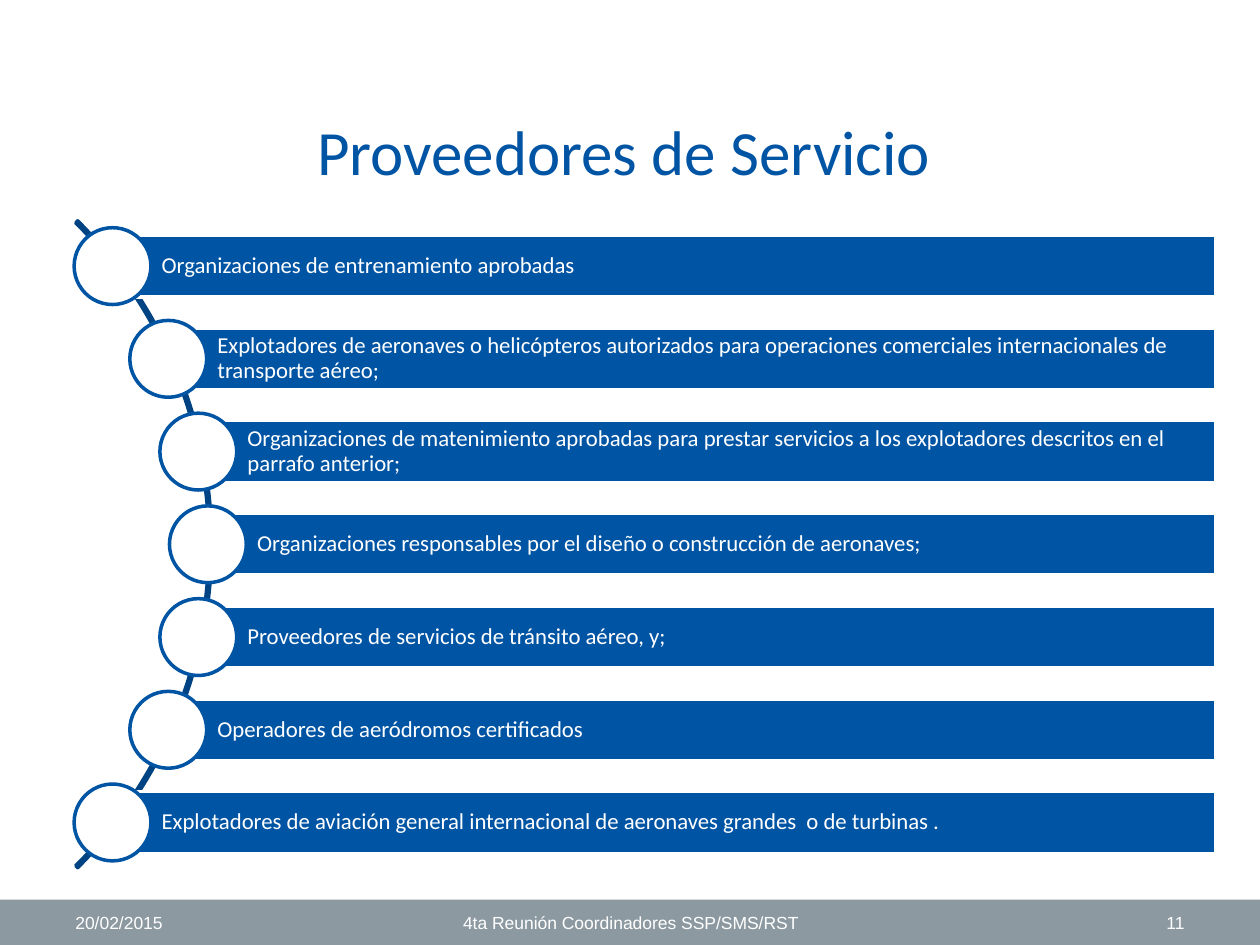
from math import sqrt

from pptx import Presentation
from pptx.dml.color import RGBColor
from pptx.enum.shapes import MSO_SHAPE
from pptx.enum.text import MSO_ANCHOR, PP_ALIGN
from pptx.util import Inches, Pt

BLUE, DARK_BLUE, GREY, WHITE = "0054A4", "004383", "8C99A1", "FFFFFF"

TITLE = "Proveedores de Servicio "
PROVIDERS = [
    "Organizaciones de entrenamiento aprobadas",
    "Explotadores de aeronaves o helicópteros autorizados para operaciones "
    "comerciales internacionales de transporte aéreo;",
    "Organizaciones de matenimiento aprobadas para prestar servicios a los "
    "explotadores descritos en el parrafo anterior;",
    "Organizaciones responsables por el diseño o construcción de aeronaves;",
    "Proveedores de servicios de tránsito aéreo, y;",
    "Operadores de aeródromos certificados",
    "Explotadores de aviación general internacional de aeronaves grandes  o de turbinas .",
]
FOOTER = [  # text, left, width, alignment
    ("20/02/2015", 0.5, 2.33, PP_ALIGN.LEFT),
    ("4ta Reunión Coordinadores SSP/SMS/RST", 3.42, 3.17, PP_ALIGN.CENTER),
    ("11", 7.17, 2.33, PP_ALIGN.RIGHT),
]
FOOTER_TOP, FOOTER_HEIGHT = 7.14, 0.36

ARC_X, ARC_Y, ARC_SIZE = -1.95, 4.32, 7.26
ORBIT = 3.6  # distance from the arc's centre to each circle's centre
ROW_STEP = 0.736
BAR_RIGHT, BAR_HEIGHT, CIRCLE = 9.65, 0.49, 0.61


def color(value):
    return RGBColor.from_string(value)


def add_shape(slide, kind, left, top, width, height, fill=None, line=None):
    shape = slide.shapes.add_shape(
        kind, Inches(left), Inches(top), Inches(width), Inches(height))
    shape.shadow.inherit = False
    if fill:
        shape.fill.solid()
        shape.fill.fore_color.rgb = color(fill)
    else:
        shape.fill.background()
    if line:
        shape.line.color.rgb = color(line)
        shape.line.width = Pt(2)
    else:
        shape.line.fill.background()
    return shape


def write(shape, words, font, size, ink, align=PP_ALIGN.LEFT, anchor=MSO_ANCHOR.MIDDLE):
    frame = shape.text_frame
    frame.word_wrap = True
    frame.vertical_anchor = anchor
    frame.text = words
    para = frame.paragraphs[0]
    para.alignment = align
    para.font.name = font
    para.font.size = Pt(size)
    para.font.color.rgb = color(ink)
    return frame


def add_text(slide, left, top, width, height, *style):
    box = slide.shapes.add_textbox(
        Inches(left), Inches(top), Inches(width), Inches(height))
    return write(box, *style)


def add_footer(slide):
    add_shape(slide, MSO_SHAPE.RECTANGLE, 0, FOOTER_TOP, 10, FOOTER_HEIGHT, GREY)
    for words, left, width, align in FOOTER:
        add_text(slide, left, FOOTER_TOP, width, FOOTER_HEIGHT,
                 words, "Arial", 10, WHITE, align)


def add_providers(slide):
    """Bars whose left ends and circles follow the arc."""
    arc = add_shape(slide, MSO_SHAPE.BLOCK_ARC, ARC_X - ARC_SIZE / 2,
                    ARC_Y - ARC_SIZE / 2, ARC_SIZE, ARC_SIZE, line=DARK_BLUE)
    for index, value in enumerate((189, 27, 0.003)):
        arc.adjustments[index] = value

    for row, words in enumerate(PROVIDERS):
        offset = (row - (len(PROVIDERS) - 1) / 2) * ROW_STEP
        x, y = ARC_X + sqrt(ORBIT ** 2 - offset ** 2), ARC_Y + offset
        bar = add_shape(slide, MSO_SHAPE.RECTANGLE, x, y - BAR_HEIGHT / 2,
                        BAR_RIGHT - x, BAR_HEIGHT, BLUE, WHITE)
        frame = write(bar, words, "Calibri", 13, WHITE)
        frame.paragraphs[0].line_spacing = 0.9
        frame.margin_left = Inches(0.39)
        frame.margin_top = frame.margin_right = frame.margin_bottom = Inches(0.04)
        add_shape(slide, MSO_SHAPE.OVAL, x - CIRCLE / 2, y - CIRCLE / 2,
                  CIRCLE, CIRCLE, WHITE, BLUE)


def main():
    deck = Presentation()
    deck.slide_width, deck.slide_height = Inches(10), Inches(7.5)
    slide = deck.slides.add_slide(deck.slide_layouts[6])
    add_footer(slide)
    add_providers(slide)
    add_text(slide, 0.51, 0.84, 9, 1.25,
             TITLE, "Calibri", 36, BLUE, PP_ALIGN.CENTER, MSO_ANCHOR.TOP)
    deck.save("out.pptx")


if __name__ == "__main__":
    main()
